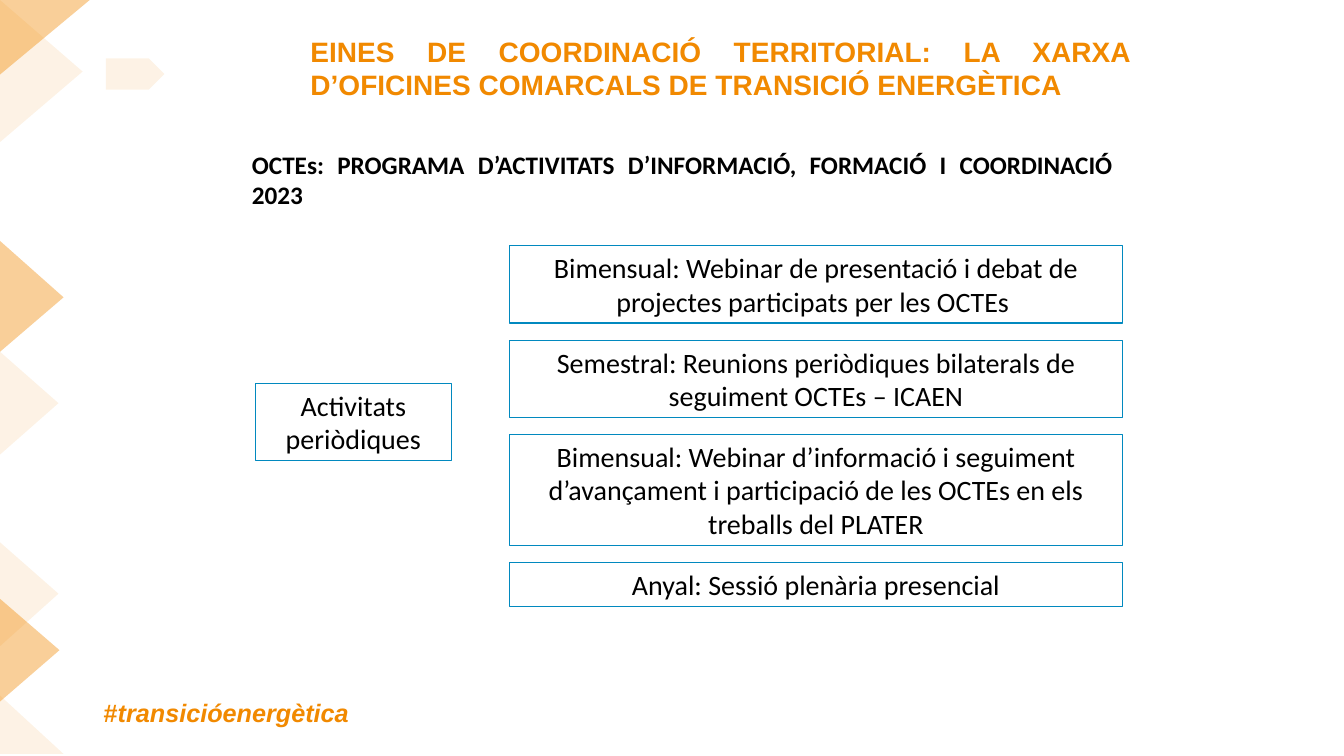
from lxml.etree import SubElement
from pptx import Presentation
from pptx.dml.color import RGBColor
from pptx.enum.shapes import MSO_SHAPE as Shape
from pptx.enum.text import MSO_ANCHOR as Anchor, MSO_AUTO_SIZE as AutoSize, PP_ALIGN as Align
from pptx.oxml.ns import qn
from pptx.util import Inches, Pt

COLORS = {"orange": "F18900", "blue": "0189BF", "black": "000000"}
TITLE_ONLY = 5


def write(shape, text, font="Calibri", size=20, color="black", bold=False,
          align=Align.CENTER, anchor=Anchor.TOP, margin_top=0.05):
    frame = shape.text_frame
    frame.word_wrap = True
    frame.auto_size = AutoSize.NONE
    frame.vertical_anchor = anchor
    frame.margin_left = frame.margin_right = Inches(0.1)
    frame.margin_top, frame.margin_bottom = Inches(margin_top), Inches(0.05)
    paragraph = frame.paragraphs[0]
    paragraph.alignment = align
    paragraph.space_before = Pt(0)
    paragraph.line_spacing = 1.0
    for content, italic in ([(text, False)] if isinstance(text, str) else text):
        run = paragraph.add_run()
        run.text = content
        run.font.name, run.font.size = font, Pt(size)
        run.font.bold, run.font.italic = bold, italic
        run.font.color.rgb = RGBColor.from_string(COLORS[color])


class Page:
    """Current slide; all lengths are percentages of its width and height."""

    def __init__(self, deck):
        self.deck = deck
        self.slide = deck.slides.add_slide(deck.slide_layouts[TITLE_ONLY])

    def x(self, share):
        return round(self.deck.slide_width * share / 100)

    def y(self, share):
        return round(self.deck.slide_height * share / 100)

    def area(self, left, top, width, height):
        return self.x(left), self.y(top), self.x(width), self.y(height)

    def tint(self, shape, opacity):
        shape.shadow.inherit = False
        shape.line.fill.background()
        shape.fill.solid()
        shape.fill.fore_color.rgb = RGBColor.from_string(COLORS["orange"])
        color = shape.fill._xPr.find(qn("a:solidFill"))[0]
        SubElement(color, qn("a:alpha")).set("val", str(opacity * 1000))

    def edge_triangle(self, top, bottom, apex_x, apex_y, opacity):
        outline = self.slide.shapes.build_freeform(0, self.y(bottom))
        outline.add_line_segments([(0, self.y(top)), (self.x(apex_x), self.y(apex_y))])
        self.tint(outline.convert_to_shape(), opacity)

    def tag(self, *area, opacity):
        self.tint(self.slide.shapes.add_shape(Shape.PENTAGON, *self.area(*area)), opacity)

    def title(self, *area, text, **style):
        heading = self.slide.shapes.title
        heading.left, heading.top, heading.width, heading.height = self.area(*area)
        write(heading, text, **style)

    def label(self, *area, text, **style):
        write(self.slide.shapes.add_textbox(*self.area(*area)), text, **style)

    def box(self, *area, text):
        frame = self.slide.shapes.add_shape(Shape.RECTANGLE, *self.area(*area))
        frame.shadow.inherit = False
        frame.fill.background()
        frame.line.color.rgb = RGBColor.from_string(COLORS["blue"])
        frame.line.width = Pt(0.75)
        write(frame, text)


def box_height(lines):
    return 1.33 + 4.45 * lines


def main():
    deck = Presentation()
    deck.slide_width, deck.slide_height = Inches(13.33), Inches(7.5)
    page = Page(deck)

    # Left edge decoration: top, bottom, apex x, apex y, opacity
    page.tag(7.88, 7.73, 4.35, 4.13, opacity=10)
    for triangle in [
        (79.2, 92.8, 4.43, 86, 40),
        (46.53, 60.13, 4.35, 53.33, 10),
        (31.87, 46.53, 4.73, 39.33, 40),
        (0, 18.8, 6.15, 9.47, 10),
        (0, 9.87, 6.68, 0, 40),
        (92, 99.73, 4.73, 99.73, 10),
        (71.73, 85.47, 4.35, 78.53, 10),
    ]:
        page.edge_triangle(*triangle)

    # Headings and hashtag
    page.title(22.35, 3.6, 62.48, 8.53,
               text="EINES DE COORDINACIÓ TERRITORIAL: LA XARXA "
                    "D’OFICINES COMARCALS DE TRANSICIÓ ENERGÈTICA",
               font="Arial", color="orange", bold=True, align=Align.JUSTIFY, margin_top=0.07)
    page.label(18, 19.07, 65.55, 9.47,
               text="OCTEs: PROGRAMA D’ACTIVITATS D’INFORMACIÓ, FORMACIÓ I COORDINACIÓ 2023",
               size=18, bold=True, align=Align.JUSTIFY)
    page.label(6.98, 91.6, 28.05, 5.33,
               text=[("#", False), ("transicióenergètica", True)],
               font="Arial", size=18, color="orange", bold=True, align=Align.LEFT)

    # Periodic activities, with box heights following the line count
    page.box(18.98, 50.67, 14.63, box_height(2), text="Activitats periòdiques")
    top, gap = 32.5, 2.25
    for lines, activity in [
        (2, "Bimensual: Webinar de presentació i debat de projectes participats per les OCTEs "),
        (2, "Semestral: Reunions periòdiques bilaterals de seguiment OCTEs – ICAEN"),
        (3, "Bimensual: Webinar d’informació i seguiment d’avançament i participació "
            "de les OCTEs en els treballs del PLATER"),
        (1, "Anyal: Sessió plenària presencial"),
    ]:
        page.box(37.88, top, 45.68, box_height(lines), text=activity)
        top += box_height(lines) + gap

    deck.save("out.pptx")


if __name__ == "__main__":
    main()
